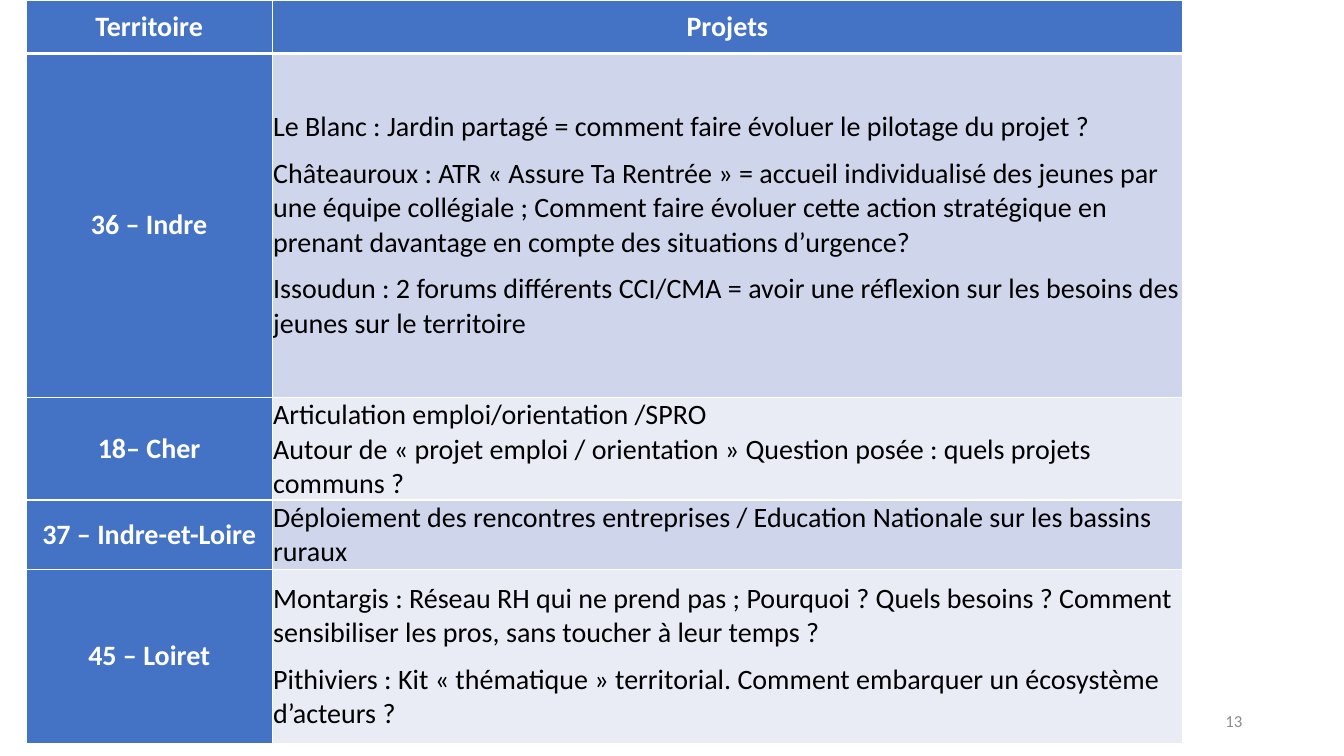
from lxml.etree import SubElement
from pptx import Presentation
from pptx.dml.color import RGBColor
from pptx.enum.text import MSO_ANCHOR, PP_ALIGN
from pptx.oxml.ns import qn
from pptx.util import Inches, Pt

FONT = "Calibri"
WHITE = RGBColor(0xFF, 0xFF, 0xFF)
BLACK = RGBColor(0, 0, 0)
GREY = RGBColor(0x8C, 0x8C, 0x8C)
BLUE = RGBColor(0x44, 0x72, 0xC4)
BAND_DARK = RGBColor(0xCF, 0xD5, 0xEA)
BAND_LIGHT = RGBColor(0xE9, 0xEB, 0xF5)

COLUMN_WIDTHS = [2.44, 9.03]
HEADER_HEIGHT = 0.53
HEADERS = ["Territoire", "Projets"]

# Territory, row height, space after each paragraph, projects
TERRITORIES = [
    ("36 – Indre", 3.41, 9, [
        "Le Blanc : Jardin partagé = comment faire évoluer le pilotage du projet ?",
        "Châteauroux : ATR « Assure Ta Rentrée » = accueil individualisé des jeunes par "
        "une équipe collégiale ; Comment faire évoluer cette action stratégique en "
        "prenant davantage en compte des situations d’urgence?",
        "Issoudun : 2 forums différents CCI/CMA = avoir une réflexion sur les besoins "
        "des jeunes sur le territoire",
    ]),
    ("18– Cher", 0.96, 0, [
        "Articulation emploi/orientation /SPRO",
        "Autour de « projet emploi / orientation » Question posée : quels projets communs ?",
    ]),
    ("37 – Indre-et-Loire", 0.51, 9, [
        "Déploiement des rencontres entreprises / Education Nationale sur les bassins ruraux",
    ]),
    ("45 – Loiret", 1.73, 9, [
        "Montargis : Réseau RH qui ne prend pas ; Pourquoi ? Quels besoins ? Comment "
        "sensibiliser les pros, sans toucher à leur temps ?",
        "Pithiviers : Kit « thématique » territorial. Comment embarquer un écosystème "
        "d’acteurs ?",
    ]),
]


def write_paragraphs(tf, texts, size=20, color=BLACK, bold=False,
                     align=PP_ALIGN.LEFT, space_after=0):
    for i, text in enumerate(texts):
        p = tf.add_paragraph() if i else tf.paragraphs[0]
        p.alignment = align
        p.space_after = Pt(space_after)
        r = p.add_run()
        r.text = text
        r.font.name = FONT
        r.font.size = Pt(size)
        r.font.bold = bold
        r.font.color.rgb = color


def set_borders(cell, bottom=1):
    """Draw white borders, 1 pt wide except for the bottom one."""
    tc_pr = cell._tc.get_or_add_tcPr()
    widths = {"a:lnL": 1, "a:lnR": 1, "a:lnT": 1, "a:lnB": bottom}
    for i, (tag, width) in enumerate(widths.items()):
        ln = SubElement(tc_pr, qn(tag), w=str(Pt(width)))
        tc_pr.insert(i, ln)
        fill = SubElement(ln, qn("a:solidFill"))
        SubElement(fill, qn("a:srgbClr"), val=str(WHITE))


def fill_cell(cell, texts, fill, bottom=1, **text_format):
    cell.fill.solid()
    cell.fill.fore_color.rgb = fill
    cell.vertical_anchor = MSO_ANCHOR.MIDDLE
    cell.margin_left = cell.margin_right = Inches(0.01)
    cell.margin_top = cell.margin_bottom = Inches(0.01)
    set_borders(cell, bottom)
    write_paragraphs(cell.text_frame, texts, **text_format)


def add_projects_table(s):
    heights = [HEADER_HEIGHT] + [height for _, height, _, _ in TERRITORIES]
    table = s.shapes.add_table(
        len(heights), len(COLUMN_WIDTHS), Inches(0.26), Inches(0),
        Inches(sum(COLUMN_WIDTHS)), Inches(sum(heights))).table
    for column, width in zip(table.columns, COLUMN_WIDTHS):
        column.width = Inches(width)
    for row, height in zip(table.rows, heights):
        row.height = Inches(height)

    heading = dict(fill=BLUE, color=WHITE, bold=True, align=PP_ALIGN.CENTER, space_after=9)
    for i, text in enumerate(HEADERS):
        fill_cell(table.cell(0, i), [text], bottom=3, **heading)
    for i, (territory, _, space_after, projects) in enumerate(TERRITORIES, 1):
        fill_cell(table.cell(i, 0), [territory], **heading)
        fill_cell(table.cell(i, 1), projects, BAND_DARK if i % 2 else BAND_LIGHT,
                  space_after=space_after)


def add_page_number(s, number):
    box = s.shapes.add_textbox(Inches(9.42), Inches(6.95), Inches(3), Inches(0.4))
    tf = box.text_frame
    tf.word_wrap = True
    tf.vertical_anchor = MSO_ANCHOR.MIDDLE
    write_paragraphs(tf, [number], size=12, color=GREY, align=PP_ALIGN.RIGHT)


def main():
    prs = Presentation()
    prs.slide_width = Inches(13.33)
    prs.slide_height = Inches(7.5)
    s = prs.slides.add_slide(prs.slide_layouts[6])
    add_page_number(s, "13")
    add_projects_table(s)
    prs.save("out.pptx")


if __name__ == "__main__":
    main()
